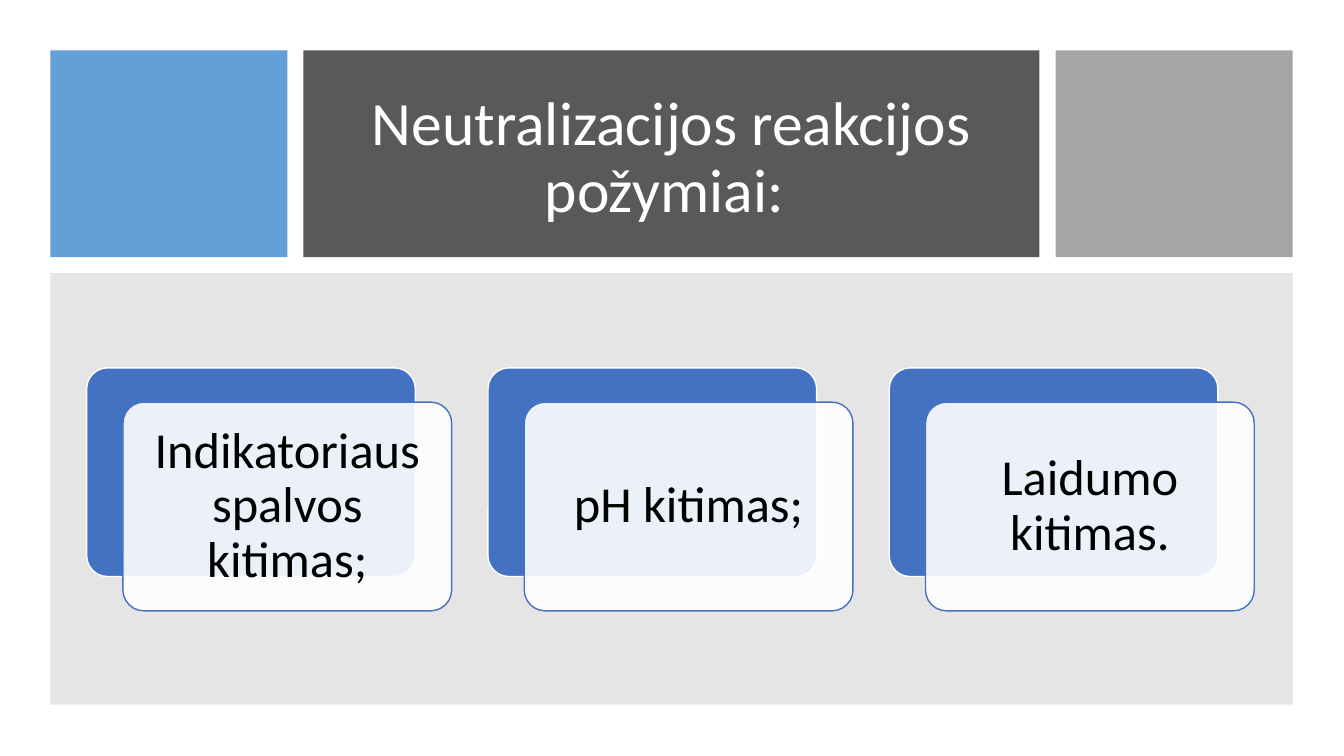
"""Build a slide with a title band and three cards on the signs of a neutralization reaction."""
from lxml.etree import SubElement
from pptx import Presentation
from pptx.dml.color import RGBColor
from pptx.enum.shapes import MSO_SHAPE
from pptx.enum.text import MSO_ANCHOR, PP_ALIGN
from pptx.oxml.ns import qn
from pptx.util import Inches, Pt

COLORS = {
    "sky": "5B9BD5",
    "charcoal": "595959",
    "silver": "A5A5A5",
    "gray": "7F7F7F",
    "blue": "4372C3",
    "white": "FFFFFF",
    "black": "000000",
}
SLIDE_WIDTH, SLIDE_HEIGHT = 13.33, 7.5
MARGIN, GAP = 0.5, 0.16
BAND_HEIGHT, SIDE_WIDTH, TITLE_WIDTH = 2.05, 2.35, 7.3
CARD_WIDTH, CARD_HEIGHT, CARD_PITCH = 3.26, 2.07, 3.98
CARD_LEFT, CARD_TOP = 0.86, 3.65
SHIFT_X, SHIFT_Y = 0.36, 0.34
SIGNS = ["Indikatoriaus spalvos kitimas;", "pH kitimas;", "Laidumo kitimas."]


def add_block(left, top, width, height, fill, opacity=100, line=None, rounded=False):
    kind = MSO_SHAPE.ROUNDED_RECTANGLE if rounded else MSO_SHAPE.RECTANGLE
    block = page.shapes.add_shape(
        kind, Inches(left), Inches(top), Inches(width), Inches(height))
    block.shadow.inherit = False
    if rounded:
        block.adjustments[0] = 0.1
    block.fill.solid()
    block.fill.fore_color.rgb = RGBColor.from_string(COLORS[fill])
    if opacity < 100:
        color = block.fill._xPr.find(qn("a:solidFill"))[0]
        SubElement(color, qn("a:alpha"), val=str(opacity * 1000))
    if line:
        block.line.color.rgb = RGBColor.from_string(COLORS[line])
        block.line.width = Pt(1)
    else:
        block.line.fill.background()
    return block


def write(box, text, size, color, inset_x=0.1, inset_y=0.05):
    frame = box.text_frame
    frame.word_wrap = True
    frame.vertical_anchor = MSO_ANCHOR.MIDDLE
    frame.margin_left = frame.margin_right = Inches(inset_x)
    frame.margin_top = frame.margin_bottom = Inches(inset_y)
    para = frame.paragraphs[0]
    para.alignment = PP_ALIGN.CENTER
    para.line_spacing = 0.9
    span = para.add_run()
    span.text = text
    span.font.size = Pt(size)
    span.font.name = "Calibri"
    span.font.color.rgb = RGBColor.from_string(COLORS[color])


deck = Presentation()
deck.slide_width, deck.slide_height = Inches(SLIDE_WIDTH), Inches(SLIDE_HEIGHT)
page = deck.slides.add_slide(deck.slide_layouts[5])

title_left = MARGIN + SIDE_WIDTH + GAP
right_left = title_left + TITLE_WIDTH + GAP
add_block(MARGIN, MARGIN, SIDE_WIDTH, BAND_HEIGHT, "sky", opacity=95)
title_band = add_block(title_left, MARGIN, TITLE_WIDTH, BAND_HEIGHT, "charcoal")

title = page.shapes.title
title.left, title.top = Inches(3.33), Inches(0.8)
title.width, title.height = Inches(6.66), Inches(1.56)
write(title, "Neutralizacijos reakcijos požymiai: ", size=44, color="white")
title_band._element.addnext(title._element)

add_block(right_left, MARGIN, SIDE_WIDTH, BAND_HEIGHT, "silver")
panel_top = MARGIN + BAND_HEIGHT + GAP
panel_width = right_left + SIDE_WIDTH - MARGIN
add_block(MARGIN, panel_top, panel_width, 4.28, "gray", opacity=20)

for column, sign in enumerate(SIGNS):
    left = CARD_LEFT + column * CARD_PITCH
    add_block(left, CARD_TOP, CARD_WIDTH, CARD_HEIGHT, "blue", line="white", rounded=True)
    card = add_block(left + SHIFT_X, CARD_TOP + SHIFT_Y, CARD_WIDTH, CARD_HEIGHT,
                     "white", opacity=90, line="blue", rounded=True)
    write(card, sign, size=36, color="black", inset_x=0.15, inset_y=0.15)

deck.save("out.pptx")
